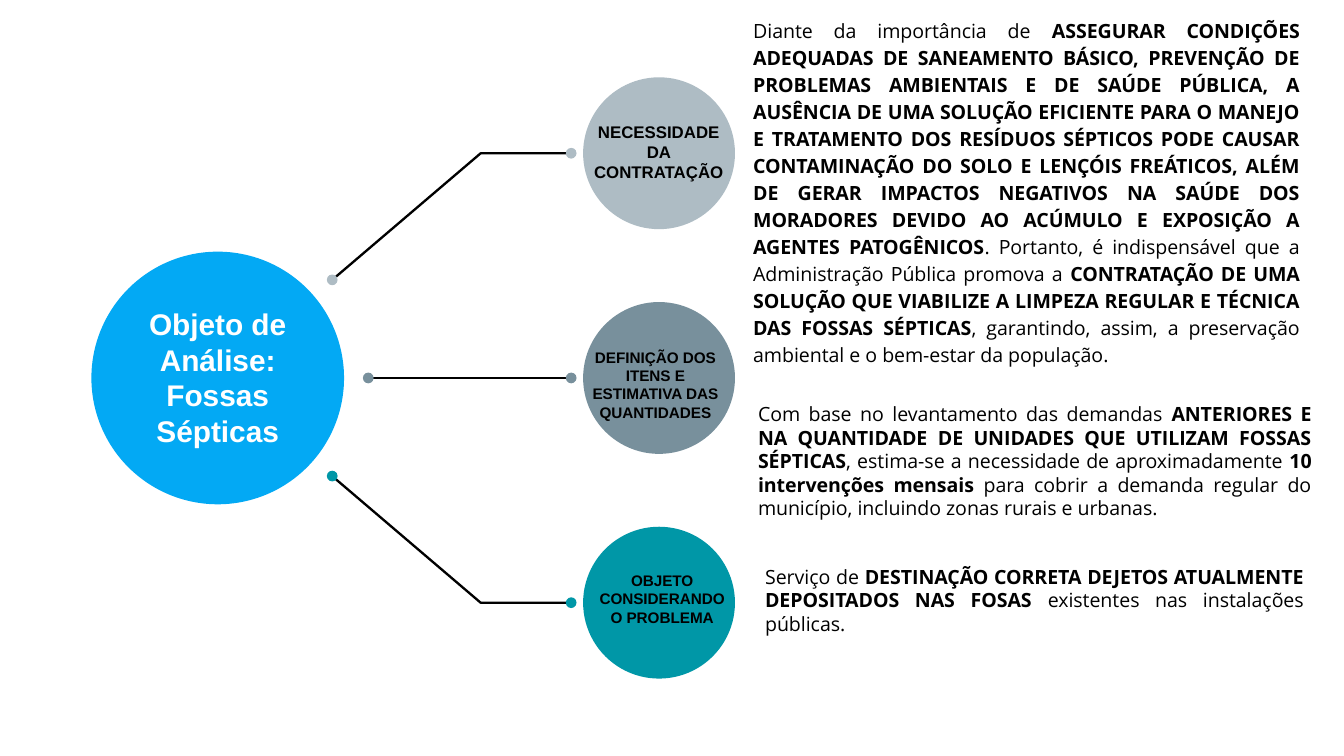
from dataclasses import dataclass

from lxml import etree
from pptx import Presentation
from pptx import util as u
from pptx.dml.color import RGBColor
from pptx.enum import shapes, text
from pptx.oxml.ns import qn

# Grid: cells of a tenth of an inch, on a 16:9 slide
COLUMNS, ROWS = 100, 56.25
HUB_X, HUB_Y, HUB_SIZE = 16.2, ROWS / 2, 18.8
NODE_X, NODE_SIZE, NODE_GAP = 49.04, 11.3, 16.72
BEND_X, LINK_END_X, DOT_SIZE = 35.77, 42.5, 0.8

BLACK = RGBColor(0x00, 0x00, 0x00)
WHITE = RGBColor(0xFF, 0xFF, 0xFF)
BLUE = RGBColor(0x03, 0xA9, 0xF4)
PALE_GRAY = RGBColor(0xAE, 0xBC, 0xC4)
SLATE = RGBColor(0x78, 0x90, 0x9C)
TEAL = RGBColor(0x00, 0x97, 0xA7)


def cells(count: float) -> u.Emu:
    return u.Inches(count / 10)


@dataclass
class Box:
    left: float
    top: float
    width: float
    height: float

    def place(self, shape) -> None:
        shape.left, shape.top = cells(self.left), cells(self.top)
        shape.width, shape.height = cells(self.width), cells(self.height)


@dataclass
class Topic:
    label: str
    label_size: float
    label_box: Box
    color: RGBColor
    link_x: float
    link_rise: float  # link start, in cells below the hub centre


@dataclass
class Detail:
    pieces: list[str]  # regular and bold pieces in turn
    box: Box
    insets: tuple[float, float]  # horizontal, vertical
    anchor: text.MSO_ANCHOR
    spacing: float


TOPICS = [
    Topic("NECESSIDADE DA CONTRATAÇÃO", 9, Box(42.9, 8.57, 12.2, 5.6), PALE_GRAY, 24.72, -7.3),
    Topic("DEFINIÇÃO DOS ITENS E ESTIMATIVA DAS QUANTIDADES", 8.2,
          Box(42.87, 25.4, 11.8, 6.6), SLATE, 27.4, 0),
    Topic("OBJETO CONSIDERANDO O PROBLEMA", 8.2, Box(43.37, 42, 11.8, 5.2), TEAL, 24.72, 7.3),
]

DETAILS = [
    Detail(["Diante da importância de ",
            "ASSEGURAR CONDIÇÕES ADEQUADAS DE SANEAMENTO BÁSICO, PREVENÇÃO DE PROBLEMAS "
            "AMBIENTAIS E DE SAÚDE PÚBLICA, A AUSÊNCIA DE UMA SOLUÇÃO EFICIENTE PARA O MANEJO "
            "E TRATAMENTO DOS RESÍDUOS SÉPTICOS PODE CAUSAR CONTAMINAÇÃO DO SOLO E LENÇÓIS "
            "FREÁTICOS, ALÉM DE GERAR IMPACTOS NEGATIVOS NA SAÚDE DOS MORADORES DEVIDO AO "
            "ACÚMULO E EXPOSIÇÃO A AGENTES PATOGÊNICOS",
            ". Portanto, é indispensável que a Administração Pública promova a ",
            "CONTRATAÇÃO DE UMA SOLUÇÃO QUE VIABILIZE A LIMPEZA REGULAR E TÉCNICA DAS FOSSAS "
            "SÉPTICAS",
            ", garantindo, assim, a preservação ambiental e o bem-estar da população."],
           Box(55.04, 0.14, 42.7, 7.9), (1, 1), text.MSO_ANCHOR.TOP, 1.15),
    Detail(["Com base no levantamento das demandas ",
            "ANTERIORES E NA QUANTIDADE DE UNIDADES QUE UTILIZAM FOSSAS SÉPTICAS",
            ", estima-se a necessidade de aproximadamente ",
            "10 intervenções mensais",
            " para cobrir a demanda regular do município, incluindo zonas rurais e urbanas."],
           Box(55.7, 29.5, 42.6, 9.6), (0.7, 0.4), text.MSO_ANCHOR.MIDDLE, 1),
    Detail(["Serviço de ",
            "DESTINAÇÃO CORRETA DEJETOS ATUALMENTE DEPOSITADOS NAS FOSAS ",
            "existentes nas instalações públicas."],
           Box(56.23, 41.63, 41.5, 6), (0.7, 0.4), text.MSO_ANCHOR.MIDDLE, 1),
]


def draw_disc(slide, x: float, y: float, size: float, color: RGBColor) -> None:
    disc = slide.shapes.add_shape(shapes.MSO_SHAPE.OVAL, cells(x - size / 2),
                                  cells(y - size / 2), cells(size), cells(size))
    disc.shadow.inherit = False
    disc.fill.solid()
    disc.fill.fore_color.rgb = color
    disc.line.fill.background()


def draw_link(slide, topic: Topic, node_y: float) -> None:
    start = cells(topic.link_x), cells(HUB_Y + topic.link_rise)
    end = cells(LINK_END_X), cells(node_y)
    if topic.link_rise:
        builder = slide.shapes.build_freeform(*start)
        builder.add_line_segments([(cells(BEND_X), cells(node_y)), end], close=False)
        link = builder.convert_to_shape()
        link.fill.background()
        link.shadow.inherit = False
    else:
        link = slide.shapes.add_connector(shapes.MSO_CONNECTOR.STRAIGHT, *start, *end)
        etree.SubElement(link._element.spPr, qn("a:effectLst"))
    link.line.color.rgb = BLACK
    link.line.width = u.Pt(1.25)


def set_frame(frame, insets: tuple[float, float], anchor: text.MSO_ANCHOR) -> None:
    frame.word_wrap = True
    frame.auto_size = text.MSO_AUTO_SIZE.NONE
    frame.vertical_anchor = anchor
    frame.margin_left = frame.margin_right = cells(insets[0])
    frame.margin_top = frame.margin_bottom = cells(insets[1])


def format_run(run, font: str, size: float, color: RGBColor, bold: bool) -> None:
    run.font.name, run.font.size, run.font.bold = font, u.Pt(size), bold
    run.font.color.rgb = color


def write_label(shape, label: str, size: float, color: RGBColor) -> None:
    set_frame(shape.text_frame, (1, 0.5), text.MSO_ANCHOR.TOP)
    shape.text_frame.text = label
    paragraph = shape.text_frame.paragraphs[0]
    paragraph.alignment = text.PP_ALIGN.CENTER
    format_run(paragraph.runs[0], "Arial", size, color, True)


def write_detail(body, detail: Detail) -> None:
    detail.box.place(body)
    set_frame(body.text_frame, detail.insets, detail.anchor)
    paragraph = body.text_frame.paragraphs[0]
    paragraph.alignment = text.PP_ALIGN.JUSTIFY
    paragraph.line_spacing = detail.spacing
    paragraph.space_before = u.Pt(0)
    properties = paragraph._p.get_or_add_pPr()
    properties.set("marL", "0")
    properties.set("indent", "0")
    etree.SubElement(properties, qn("a:buNone"))
    for index, piece in enumerate(detail.pieces):
        run = paragraph.add_run()
        run.text = piece
        format_run(run, "Open Sans", 10.5, BLACK, index % 2 == 1)


def main() -> None:
    deck = Presentation()
    deck.slide_width, deck.slide_height = cells(COLUMNS), cells(ROWS)
    slide = deck.slides.add_slide(deck.slide_layouts.get_by_name("Comparison"))
    title, *bodies, spare = list(slide.placeholders)
    spare._element.getparent().remove(spare._element)

    # Hub, links and topic circles
    draw_disc(slide, HUB_X, HUB_Y, HUB_SIZE, BLUE)
    for row, topic in enumerate(TOPICS):
        node_y = HUB_Y + (row - 1) * NODE_GAP
        draw_disc(slide, NODE_X, node_y, NODE_SIZE, topic.color)
        draw_link(slide, topic, node_y)
        draw_disc(slide, topic.link_x, HUB_Y + topic.link_rise, DOT_SIZE, topic.color)
        draw_disc(slide, LINK_END_X, node_y, DOT_SIZE, topic.color)
        label = slide.shapes.add_textbox(0, 0, 0, 0)
        topic.label_box.place(label)
        write_label(label, topic.label, topic.label_size, BLACK)

    # Title, brought in front of the hub
    Box(9.55, 22.23, 13.3, 11.8).place(title)
    write_label(title, "Objeto de Análise: Fossas Sépticas", 16, WHITE)
    slide.shapes._spTree.append(title._element)

    # Explanations
    for body, detail in zip(bodies, DETAILS):
        write_detail(body, detail)

    deck.save("out.pptx")


if __name__ == "__main__":
    main()
